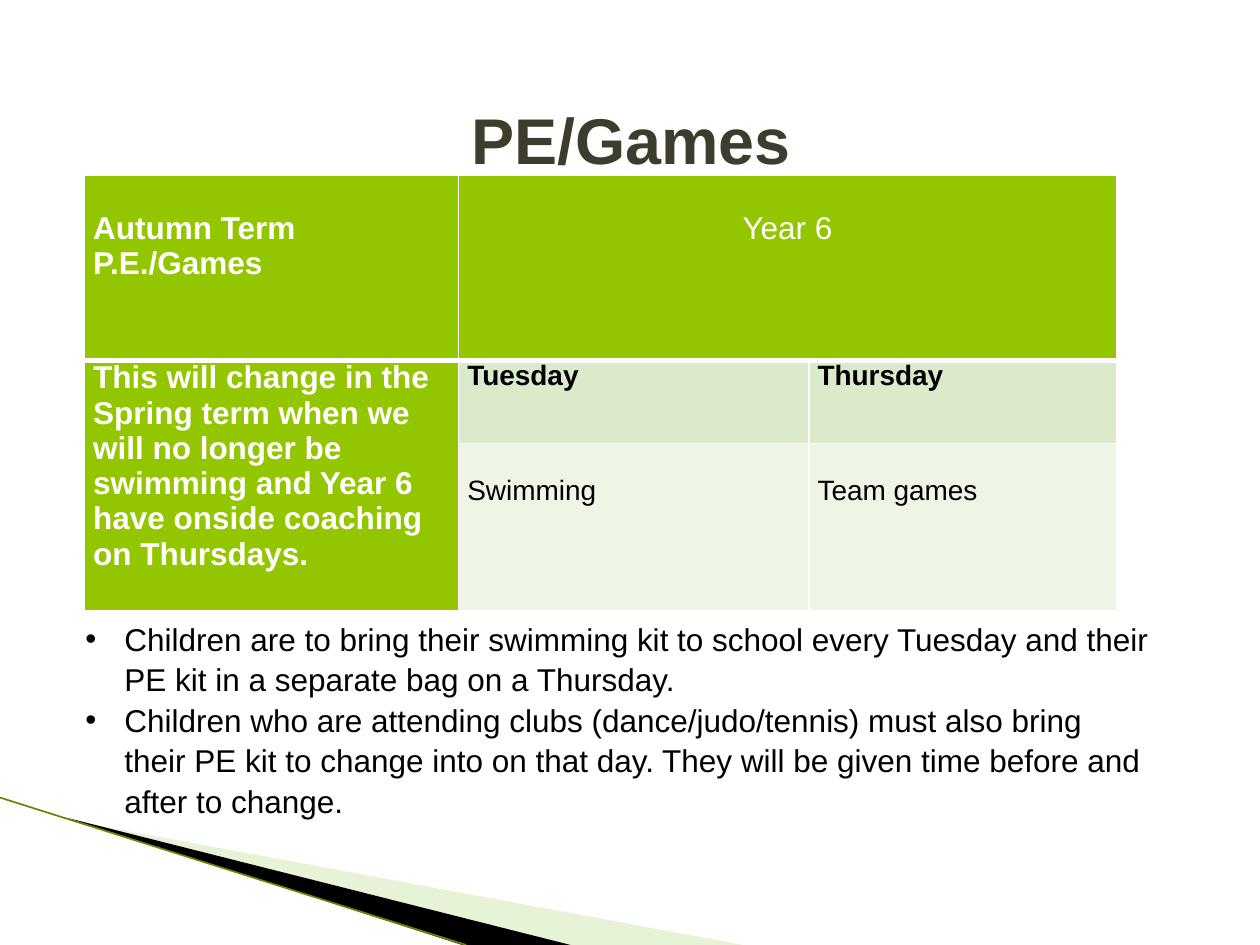
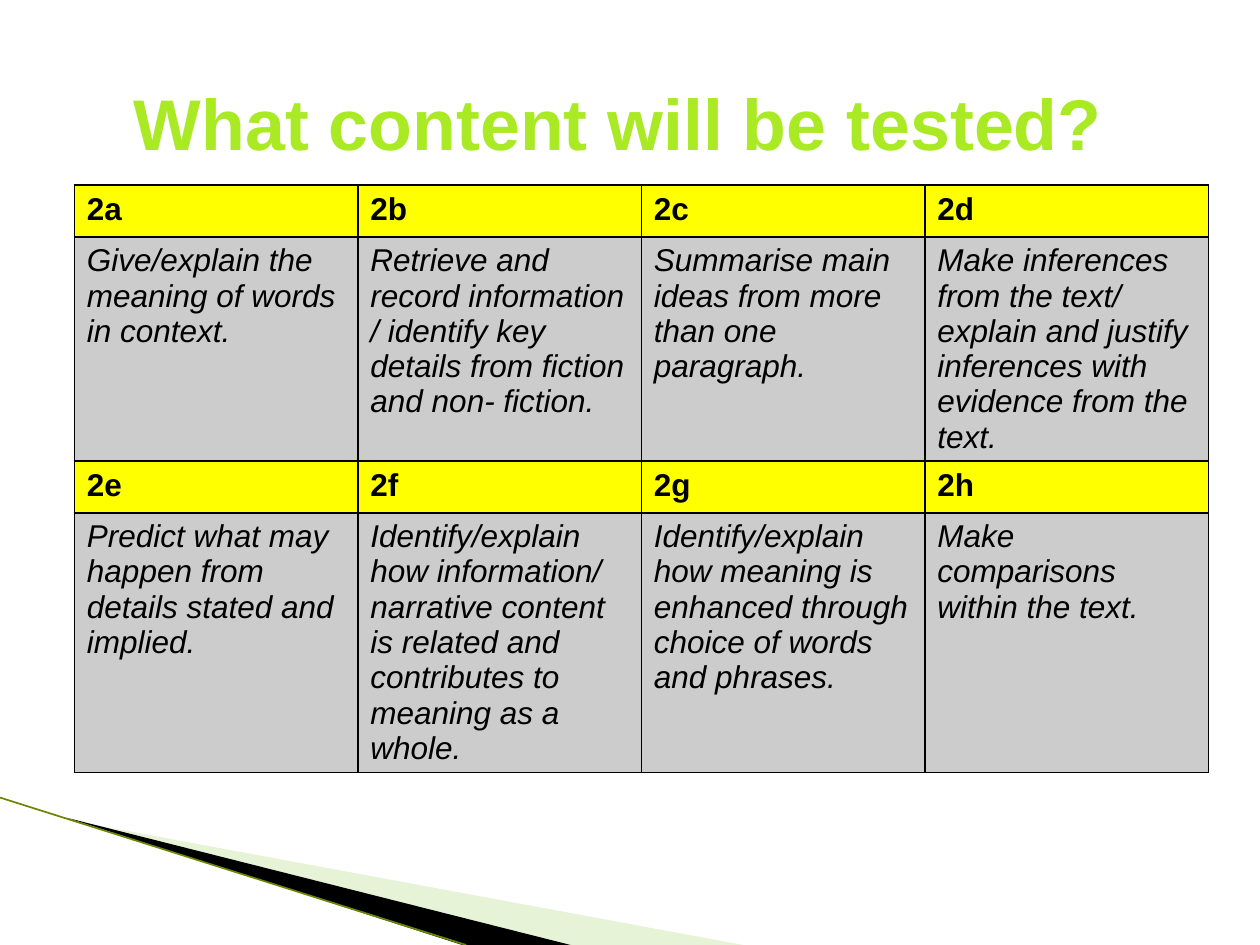
from dataclasses import dataclass

from lxml import etree
from pptx import Presentation
from pptx import util as u
from pptx.dml.color import RGBColor
from pptx.enum import text as t
from pptx.oxml import ns

COLUMNS, ROWS = 100, 75
UNIT = u.Inches(10) // COLUMNS


@dataclass(frozen=True)
class Theme:
    """Colours and type sizes of the whole deck."""
    font: str = "Arial"
    white: str = "FFFFFF"
    black: str = "000000"
    olive: str = "3E3D2D"
    lime: str = "AAEA25"
    green: str = "94C600"
    pale: str = "DCEACC"
    paler: str = "EEF5E7"
    yellow: str = "FFFF00"
    grey: str = "CCCCCC"
    sweep: str = "C3E19D"
    sweep_edge: str = "6A8500"
    games_title: float = 36.9
    content_title: float = 41
    body: float = 18
    small: float = 16


THEME = Theme()


def grid(*lengths):
    """Turn grid columns or rows into lengths."""
    return [u.Emu(round(length * UNIT)) for length in lengths]


def add_element(parent, tag, **attributes):
    """Append a DrawingML element."""
    return etree.SubElement(parent, ns.qn(tag), attributes)


def write(paragraph, words, size=THEME.body, color=THEME.black, bold=False,
          italic=False, align=t.PP_ALIGN.LEFT):
    """Write formatted words into a paragraph."""
    paragraph.alignment = align
    run = paragraph.add_run()
    run.text = words
    font = run.font
    font.name, font.size = THEME.font, u.Pt(size)
    font.bold, font.italic = bold, italic
    font.color.rgb = RGBColor.from_string(color)


def add_facet(slide, corners, color, opacity=100):
    """Draw one filled facet of the corner sweep."""
    start, *others = [grid(*corner) for corner in corners]
    outline = slide.shapes.build_freeform(*start)
    outline.add_line_segments(others)
    facet = outline.convert_to_shape()
    facet.shadow.inherit = False
    facet.line.fill.background()
    facet.fill.solid()
    facet.fill.fore_color.rgb = RGBColor.from_string(color)
    if opacity < 100:
        shade = facet.fill._xPr.find(".//" + ns.qn("a:srgbClr"))
        add_element(shade, "a:alpha", val=str(opacity * 1000))


def add_sweep(slide):
    """Draw the sweep shared by all slides at the lower left."""
    add_facet(slide, [(5.5, 65.1), (59, ROWS), (45.2, ROWS)], THEME.sweep, 40)
    add_facet(slide, [(5.3, 64.9), (45.3, ROWS), (36.7, ROWS)], THEME.black)
    edge = slide.shapes.add_connector(1, *grid(0, 63.3, 37, ROWS))
    edge.line.color.rgb = RGBColor.from_string(THEME.sweep_edge)
    edge.line.width = u.Pt(0.95)
    add_element(edge._element.spPr, "a:effectLst")


def start_slide(deck, heading, place, size, color):
    """Add a slide with the sweep and a centred title."""
    slide = deck.slides.add_slide(deck.slide_layouts[5])
    add_sweep(slide)
    title = slide.shapes.title
    title.left, title.top, title.width, title.height = grid(*place)
    frame = title.text_frame
    frame.auto_size = t.MSO_AUTO_SIZE.NONE
    frame.vertical_anchor = t.MSO_ANCHOR.MIDDLE
    write(frame.paragraphs[0], heading, size=size, color=color, bold=True,
          align=t.PP_ALIGN.CENTER)
    return slide


def add_grid_table(slide, corner, widths, heights):
    """Add a plain table with the given columns and rows."""
    place = grid(*corner, sum(widths), sum(heights))
    table = slide.shapes.add_table(len(heights), len(widths), *place).table
    table.first_row = table.horz_banding = False
    for column, width in zip(table.columns, grid(*widths)):
        column.width = width
    for row, height in zip(table.rows, grid(*heights)):
        row.height = height
    return table


def dress(cell, fill, border, bottom=1):
    """Give a cell its borders and fill."""
    properties = cell._tc.get_or_add_tcPr()
    for side in "LRTB":
        points = bottom if side == "B" else 1
        line = add_element(properties, f"a:ln{side}", w=str(u.Pt(points)))
        solid = add_element(line, "a:solidFill")
        add_element(solid, "a:srgbClr", val=border)
    cell.fill.solid()
    cell.fill.fore_color.rgb = RGBColor.from_string(fill)


def add_timetable(slide):
    """Add the PE timetable with its merged header cells."""
    table = add_grid_table(slide, (6.7, 13.9), (29.7, 27.8, 24.4), (14.7, 6.6, 13.3))
    days = (THEME.pale, THEME.paler)
    for row in range(3):
        for column in range(3):
            is_header = row == 0 or column == 0
            dress(table.cell(row, column), THEME.green if is_header else days[row - 1],
                  THEME.white, bottom=1 if row else 3)
    table.cell(0, 1).merge(table.cell(0, 2))
    table.cell(1, 0).merge(table.cell(2, 0))

    header = dict(color=THEME.white)
    day = dict(size=THEME.small)
    entries = [
        (0, 0, 2.8, "Autumn Term P.E./Games", dict(header, bold=True)),
        (0, 1, 2.8, "Year 6", dict(header, align=t.PP_ALIGN.CENTER)),
        (1, 0, 0, "This will change in the Spring term when we will no longer be "
                  "swimming and Year 6 have onside coaching on Thursdays.",
         dict(header, bold=True)),
        (1, 1, 0, "Tuesday", dict(day, bold=True)),
        (1, 2, 0, "Thursday", dict(day, bold=True)),
        (2, 1, 2.5, "Swimming", day),
        (2, 2, 2.5, "Team games", day),
    ]
    for row, column, drop, words, look in entries:
        cell = table.cell(row, column)
        cell.margin_left, cell.margin_right, cell.margin_top, cell.margin_bottom = grid(
            0.7, 0.7, drop, 0)
        write(cell.text_frame.paragraphs[0], words, **look)


def add_bullets(slide, place, reminders):
    """Add a bulleted list."""
    frame = slide.shapes.add_textbox(*grid(*place)).text_frame
    frame.word_wrap = True
    indent = u.Inches(0.31)
    for number, reminder in enumerate(reminders):
        paragraph = frame.add_paragraph() if number else frame.paragraphs[0]
        properties = paragraph._p.get_or_add_pPr()
        properties.set("marL", str(indent))
        properties.set("indent", str(-indent))
        add_element(properties, "a:buFont", typeface=THEME.font)
        add_element(properties, "a:buChar", char="•")
        paragraph.line_spacing = 1.07
        write(paragraph, reminder)


def add_content_domains(slide, domains):
    """Add the reading domains, four codes to a band above their meanings."""
    per_band = 4
    table = add_grid_table(slide, (5.9, 14.7), [22.5] * per_band, (4.1, 17.8, 4.1, 20.5))
    for number, (code, meaning) in enumerate(domains):
        band, column = divmod(number, per_band)
        code_cell, meaning_cell = (table.cell(2 * band + step, column) for step in (0, 1))
        dress(code_cell, THEME.yellow, THEME.black)
        dress(meaning_cell, THEME.grey, THEME.black)
        write(code_cell.text_frame.paragraphs[0], code, bold=True)
        write(meaning_cell.text_frame.paragraphs[0], meaning, italic=True)


def main():
    """Build and save the deck."""
    deck = Presentation()
    deck.slide_width, deck.slide_height = grid(COLUMNS, ROWS)

    games = start_slide(deck, "PE/Games", (5.1, 3.9, 90, 14.2),
                        THEME.games_title, THEME.olive)
    add_timetable(games)
    add_bullets(games, (5.8, 48.5, 86.6, 13.1), [
        "Children are to bring their swimming kit to school every Tuesday and their "
        "PE kit in a separate bag on a Thursday.",
        "Children who are attending clubs (dance/judo/tennis) must also bring their "
        "PE kit to change into on that day. They will be given time before and after "
        "to change.",
    ])

    content = start_slide(deck, "What content will be tested?", (4.1, 3.4, 90, 12.5),
                          THEME.content_title, THEME.lime)
    add_content_domains(content, [
        ("2a", "Give/explain the meaning of words in context."),
        ("2b", "Retrieve and record information / identify key details from fiction "
               "and non- fiction."),
        ("2c", "Summarise main ideas from more than one paragraph."),
        ("2d", "Make inferences from the text/ explain and justify inferences with "
               "evidence from the text."),
        ("2e", "Predict what may happen from details stated and implied."),
        ("2f", "Identify/explain how information/ narrative content is related and "
               "contributes to meaning as a whole."),
        ("2g", "Identify/explain how meaning is enhanced through choice of words and "
               "phrases."),
        ("2h", "Make comparisons within the text."),
    ])
    deck.save("out.pptx")


if __name__ == "__main__":
    main()
